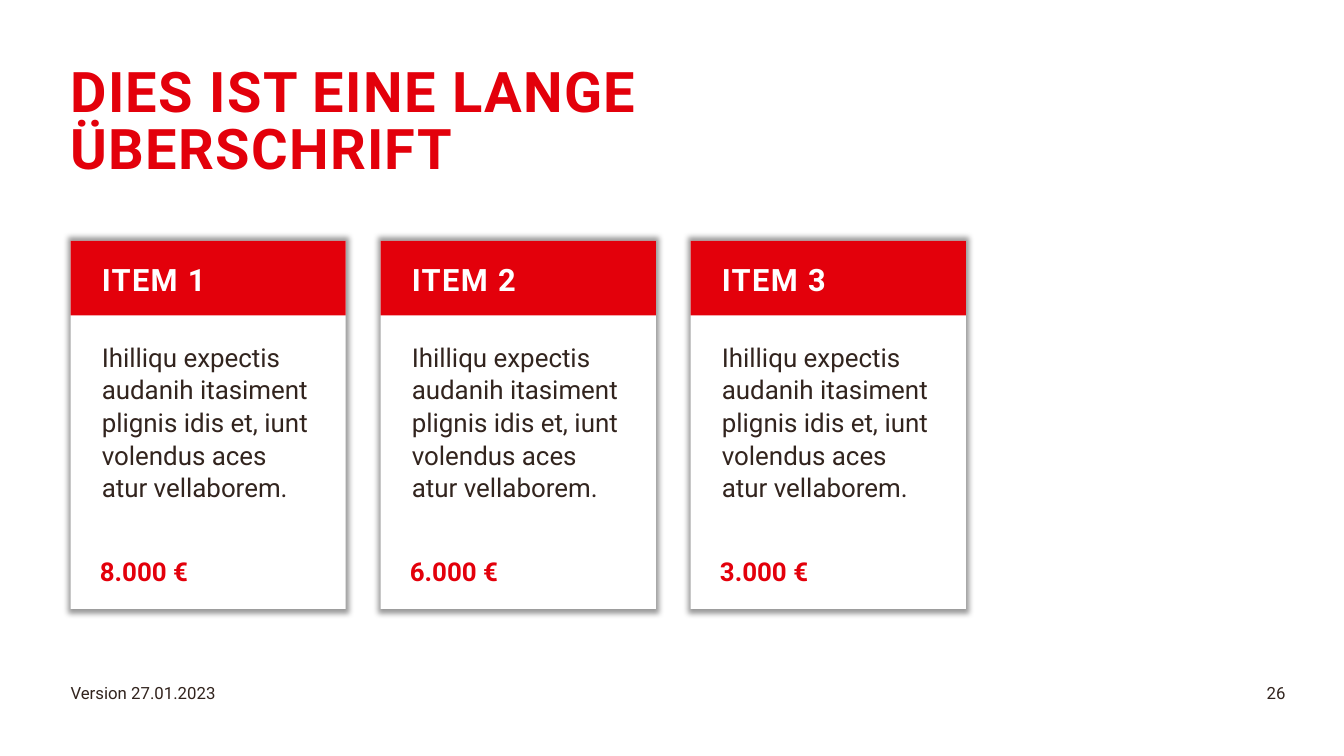
from dataclasses import dataclass

from lxml.etree import SubElement
from pptx import Presentation
from pptx.dml.color import RGBColor
from pptx.enum.shapes import MSO_SHAPE
from pptx.enum.text import MSO_ANCHOR, PP_ALIGN
from pptx.oxml.ns import qn
from pptx.util import Inches, Pt


@dataclass(frozen=True)
class Theme:
    font: str = "Roboto"
    red: str = "E3000B"
    dark: str = "32241E"
    white: str = "FFFFFF"
    shadow: str = "000000"
    title: float = 40
    heading: float = 22
    body: float = 18.5
    footer: float = 12


THEME = Theme()
SLIDE_W, SLIDE_H = 13.33, 7.5
LEFT, CARD_TOP = 0.7, 2.39
CARD_W, CARD_H, HEADER_H = 2.73, 3.65, 0.74
CARD_PITCH = 3.075
FOOTER_TOP, FOOTER_H = 6.77, 0.4
PADDING = 0.31

BODY = ["Ihilliqu expectis audanih itasiment plignis idis et, iunt volendus aces",
        "atur vellaborem."]
ITEMS = [("ITEM 1", "8.000 €"), ("ITEM 2", "6.000 €"), ("ITEM 3", "3.000 €")]


def write(sp, paragraphs, size, color=THEME.dark, bold=False, spacing=0, line=1.0,
          align=PP_ALIGN.LEFT, anchor=MSO_ANCHOR.TOP, insets=(0, 0, 0, 0)):
    """Fill a shape with paragraphs; insets are left, top, right, bottom in inches."""
    tf = sp.text_frame
    tf.word_wrap = True
    tf.vertical_anchor = anchor
    tf.margin_left, tf.margin_top, tf.margin_right, tf.margin_bottom = map(Inches, insets)
    for i, text in enumerate(paragraphs):
        p = tf.paragraphs[0] if i == 0 else tf.add_paragraph()
        p.alignment = align
        p.line_spacing = line
        r = p.add_run()
        r.text = text
        r.font.name = THEME.font
        r.font.size = Pt(size)
        r.font.bold = bold
        r.font.color.rgb = RGBColor.from_string(color)
        if spacing:
            r.font._element.set("spc", str(round(spacing * 100)))


def add_text(slide, box, text, size, **fmt):
    sp = slide.shapes.add_textbox(*map(Inches, box))
    write(sp, [text], size, **fmt)


def add_panel(slide, box, fill):
    sp = slide.shapes.add_shape(MSO_SHAPE.RECTANGLE, *map(Inches, box))
    sp.shadow.inherit = False
    sp.fill.solid()
    sp.fill.fore_color.rgb = RGBColor.from_string(fill)
    sp.line.fill.background()
    return sp


def add_shadow(sp):
    """Give the shape a soft shadow two percent larger than itself."""
    effects = sp._element.spPr.find(qn("a:effectLst"))
    outer = SubElement(effects, qn("a:outerShdw"), blurRad=str(Pt(4)), sx="102000",
                       sy="102000", algn="ctr", rotWithShape="0")
    color = SubElement(outer, qn("a:srgbClr"), val=THEME.shadow)
    SubElement(color, qn("a:alpha"), val="40000")


def add_card(slide, column, heading, price):
    x = LEFT + column * CARD_PITCH
    card = add_panel(slide, (x, CARD_TOP, CARD_W, CARD_H), THEME.white)
    add_shadow(card)
    write(card, BODY, THEME.body, line=1.05, insets=(PADDING, 0.98, 0.28, 0.6))
    header = add_panel(slide, (x, CARD_TOP, CARD_W, HEADER_H), THEME.red)
    write(header, [heading], THEME.heading, color=THEME.white, bold=True, spacing=1,
          line=1.05, anchor=MSO_ANCHOR.MIDDLE, insets=(PADDING, 0.12, 0.12, 0.12))
    add_text(slide, (x + 0.29, 5.5, 2.21, 0.26), price, THEME.body,
             color=THEME.red, bold=True, line=1.05)


def main():
    prs = Presentation()
    prs.slide_width, prs.slide_height = Inches(SLIDE_W), Inches(SLIDE_H)
    slide = prs.slides.add_slide(prs.slide_layouts[6])
    add_text(slide, (10.6, FOOTER_TOP, 2.15, FOOTER_H), "26", THEME.footer,
             align=PP_ALIGN.RIGHT)
    add_text(slide, (LEFT, FOOTER_TOP, 8.23, FOOTER_H), "Version 27.01.2023", THEME.footer)
    add_text(slide, (LEFT, 0.66, 8.2, 1.12), "DIES IST EINE LANGE ÜBERSCHRIFT",
             THEME.title, color=THEME.red, bold=True, spacing=1, line=0.85)
    for column, (heading, price) in enumerate(ITEMS):
        add_card(slide, column, heading, price)
    prs.save("out.pptx")


if __name__ == "__main__":
    main()
